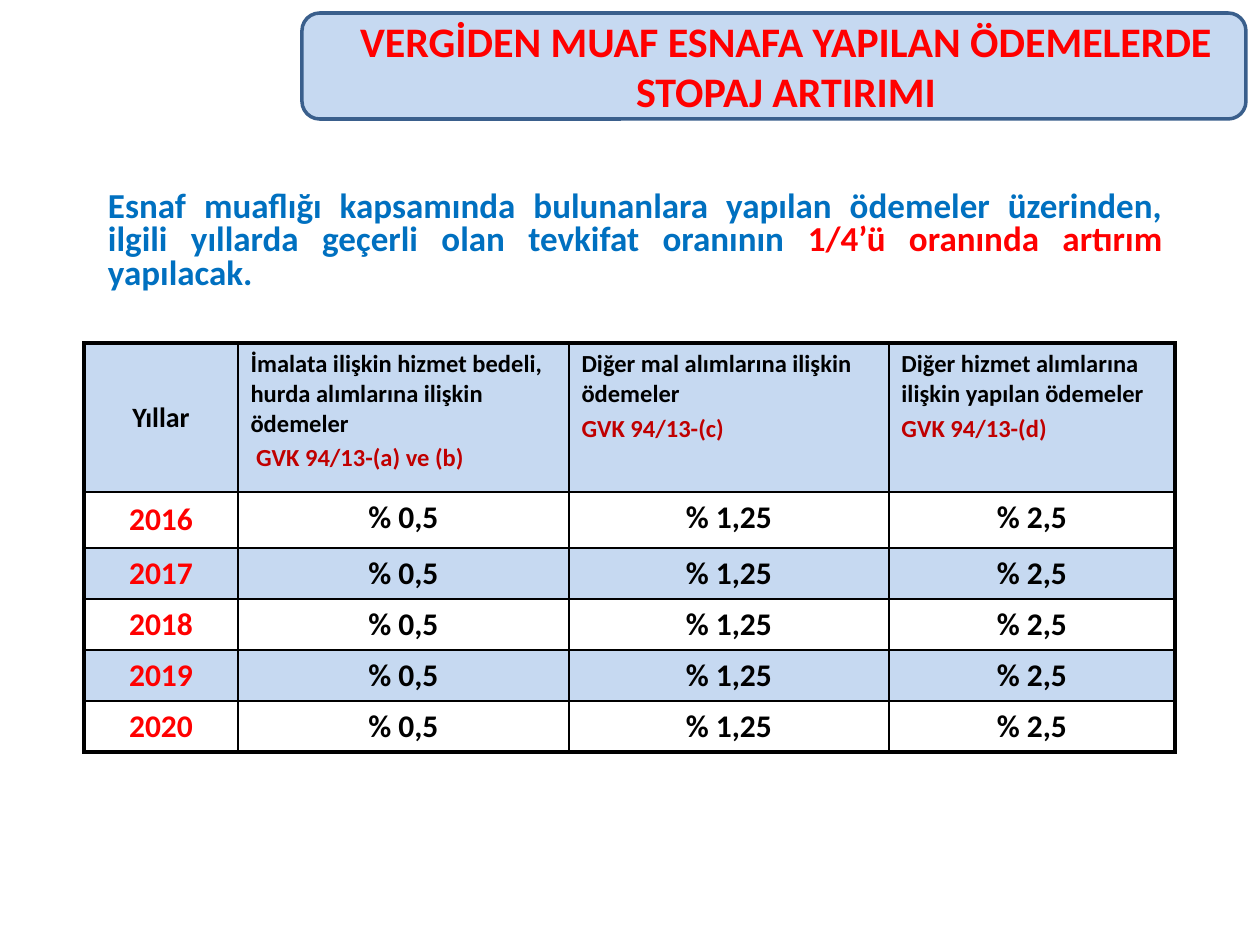
from dataclasses import dataclass

import lxml.etree
import pptx
import pptx.dml.color
import pptx.enum.shapes
import pptx.enum.text
import pptx.oxml.ns
import pptx.util

ALIGN = pptx.enum.text.PP_ALIGN
ANCHOR = pptx.enum.text.MSO_ANCHOR


@dataclass(frozen=True)
class Theme:
    font: str = "Calibri"
    red: str = "FF0000"
    dark_red: str = "C00000"
    blue: str = "0070C0"
    black: str = "000000"
    pale: str = "C6D9F1"
    outline: str = "3A5F8C"
    title: int = 24
    intro: int = 20
    rate: int = 18
    corner: int = 16
    heading: int = 14
    thin: float = 1
    thick: float = 2.25


THEME = Theme()
PX_PER_INCH = 126
COLUMNS = [154, 331, 320, 286]
ROWS = [149, 56, 51, 51, 51, 51]
YEARS = range(2016, 2021)
RATES = ["% 0,5", "% 1,25", "% 2,5"]
HEADINGS = [
    ("İmalata ilişkin hizmet bedeli, hurda alımlarına ilişkin ödemeler",
     " GVK 94/13-(a) ve (b)"),
    ("Diğer mal alımlarına ilişkin ödemeler", "GVK 94/13-(c)"),
    ("Diğer hizmet alımlarına ilişkin yapılan ödemeler", "GVK 94/13-(d)"),
]


def px(length):
    return pptx.util.Emu(round(length * 914400 / PX_PER_INCH))


def rgb(value):
    return pptx.dml.color.RGBColor.from_string(value)


def place(shape, left, top, width, height):
    shape.left, shape.top = px(left), px(top)
    shape.width, shape.height = px(width), px(height)


def write(frame, paragraphs, size, align=ALIGN.LEFT, spacing=None):
    """Fill a frame with paragraphs, each a list of (text, colour) runs."""
    frame.word_wrap = True
    for index, runs in enumerate(paragraphs):
        paragraph = frame.add_paragraph() if index else frame.paragraphs[0]
        paragraph.alignment = align
        paragraph.line_spacing = spacing
        if index:
            paragraph.space_before = pptx.util.Pt(size * 0.2)
        for text, colour in runs:
            run = paragraph.add_run()
            run.text = text
            run.font.name = THEME.font
            run.font.size = pptx.util.Pt(size)
            run.font.bold = True
            run.font.color.rgb = rgb(colour)


def add_title(slide, text):
    title = slide.shapes.title
    place(title, 312, 26, 948, 79)
    title.text_frame.auto_size = pptx.enum.text.MSO_AUTO_SIZE.NONE
    title.text_frame.vertical_anchor = ANCHOR.MIDDLE
    write(title.text_frame, [[(text, THEME.red)]], THEME.title, ALIGN.CENTER)


def add_banner(slide):
    """Put the rounded panel behind the title."""
    banner = slide.shapes.add_shape(
        pptx.enum.shapes.MSO_SHAPE.ROUNDED_RECTANGLE, 0, 0, 0, 0)
    place(banner, 302, 13, 944, 106)
    banner.shadow.inherit = False
    banner.fill.solid()
    banner.fill.fore_color.rgb = rgb(THEME.pale)
    banner.line.color.rgb = rgb(THEME.outline)
    banner.line.width = pptx.util.Pt(2)
    slide.shapes.title.element.addprevious(banner.element)


def add_intro(slide, runs):
    box = slide.shapes.add_textbox(0, 0, 0, 0)
    place(box, 84, 185, 1091, 110)
    box.text_frame.margin_left = px(24)
    write(box.text_frame, [runs], THEME.intro, ALIGN.JUSTIFY, 0.8)


def set_borders(cell, widths):
    """Draw the left, right, top and bottom edges, in that order."""
    properties = cell._tc.get_or_add_tcPr()
    for side, width in zip("LRTB", widths):
        line = lxml.etree.SubElement(
            properties, pptx.oxml.ns.qn(f"a:ln{side}"), w=str(pptx.util.Pt(width)))
        fill = lxml.etree.SubElement(line, pptx.oxml.ns.qn("a:solidFill"))
        lxml.etree.SubElement(fill, pptx.oxml.ns.qn("a:srgbClr"), val=THEME.black)


def format_cell(cell, row, column):
    last_row, last_column = len(ROWS) - 1, len(COLUMNS) - 1
    on_edge = [column == 0, column == last_column, row == 0, row == last_row]
    set_borders(cell, [THEME.thick if edge else THEME.thin for edge in on_edge])
    if row % 2 == 0:
        cell.fill.solid()
        cell.fill.fore_color.rgb = rgb(THEME.pale)
    else:
        cell.fill.background()
    cell.vertical_anchor = ANCHOR.MIDDLE if column == 0 else ANCHOR.TOP


def add_rates_table(slide):
    table = slide.shapes.add_table(
        len(ROWS), len(COLUMNS), px(84), px(343),
        px(sum(COLUMNS)), px(sum(ROWS))).table
    table.first_row = table.horz_banding = False
    for column, width in zip(table.columns, COLUMNS):
        column.width = px(width)
    for row, height in zip(table.rows, ROWS):
        row.height = px(height)
    for row in range(len(ROWS)):
        for column in range(len(COLUMNS)):
            format_cell(table.cell(row, column), row, column)

    write(table.cell(0, 0).text_frame, [[("Yıllar", THEME.black)]],
          THEME.corner, ALIGN.CENTER)
    for column, (payment, article) in enumerate(HEADINGS, 1):
        write(table.cell(0, column).text_frame,
              [[(payment, THEME.black)], [(article, THEME.dark_red)]],
              THEME.heading)
    for row, year in enumerate(YEARS, 1):
        for column, text in enumerate([str(year), *RATES]):
            colour = THEME.black if column else THEME.red
            write(table.cell(row, column).text_frame, [[(text, colour)]],
                  THEME.rate, ALIGN.CENTER)


def main():
    presentation = pptx.Presentation()
    presentation.slide_width, presentation.slide_height = px(1260), px(945)
    slide = presentation.slides.add_slide(
        presentation.slide_layouts.get_by_name("Title Only"))
    add_title(slide, "VERGİDEN MUAF ESNAFA YAPILAN ÖDEMELERDE STOPAJ ARTIRIMI")
    add_banner(slide)
    add_intro(slide, [
        ("Esnaf muaflığı kapsamında bulunanlara yapılan ödemeler üzerinden, "
         "ilgili yıllarda geçerli olan tevkifat oranının ", THEME.blue),
        ("1/4’ü oranında artırım ", THEME.red),
        ("yapılacak.", THEME.blue),
    ])
    add_rates_table(slide)
    presentation.save("out.pptx")


if __name__ == "__main__":
    main()
